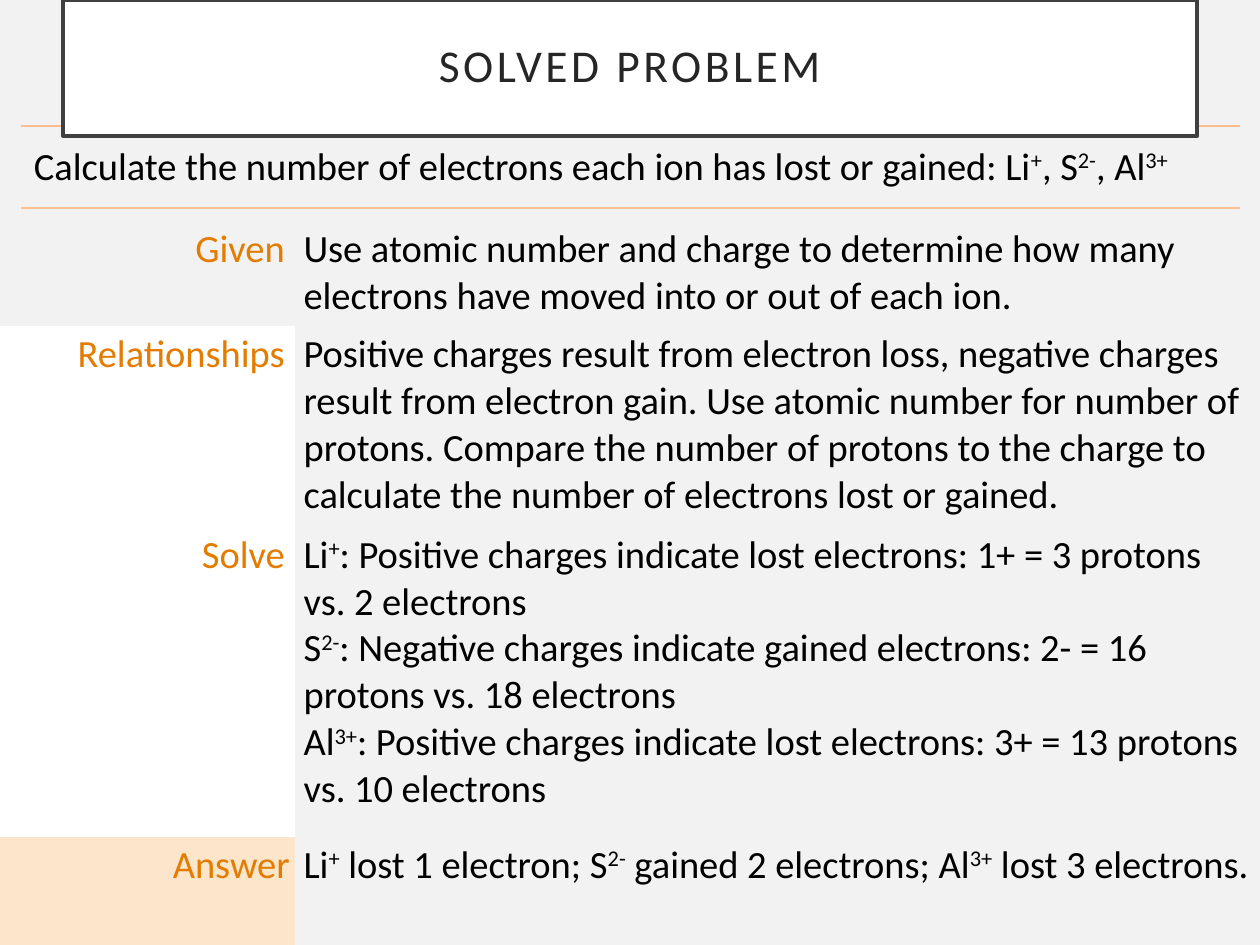
from dataclasses import dataclass

from lxml.etree import SubElement
from pptx import Presentation
from pptx.dml.color import RGBColor as RGB
from pptx.enum.text import MSO_ANCHOR as Anchor, PP_ALIGN as Align
from pptx.oxml.ns import qn
from pptx.util import Cm, Pt


@dataclass(frozen=True)
class Theme:
    font: str = "Calibri"
    title_size: int = 26
    body_size: int = 22
    background: RGB = RGB(0xF2, 0xF2, 0xF2)
    white: RGB = RGB(0xFF, 0xFF, 0xFF)
    frame: RGB = RGB(0x40, 0x40, 0x40)
    title: RGB = RGB(0x26, 0x26, 0x26)
    body: RGB = RGB(0, 0, 0)
    label: RGB = RGB(0xE3, 0x7C, 0x00)
    answer: RGB = RGB(0xFB, 0xE6, 0xCC)
    rule: str = "FEBE8F"


THEME = Theme()
PLAIN_TABLE = "{2D5ABB26-0587-4C30-8999-92F81FD0307C}"


def add_plain_table(slide, left, top, widths, heights):
    """Add a table without bands, grid or fills, sized in centimetres."""
    frame = slide.shapes.add_table(len(heights), len(widths), Cm(left), Cm(top),
                                   Cm(sum(widths)), Cm(sum(heights)))
    table = frame.table
    table.first_row = table.horz_banding = False
    table._tbl.tblPr.find(qn("a:tableStyleId")).text = PLAIN_TABLE
    for column, width in zip(table.columns, widths):
        column.width = Cm(width)
    for row, height in zip(table.rows, heights):
        row.height = Cm(height)
    return table


def write(paragraph, text, color, size=THEME.body_size):
    """Add runs to a paragraph; text between carets is superscript."""
    for index, part in enumerate(text.split("^")):
        for line_number, line in enumerate(part.split("\n")):
            if line_number:
                paragraph.add_line_break()
            if not line:
                continue
            run = paragraph.add_run()
            run.text = line
            run.font.name = THEME.font
            run.font.size = Pt(size)
            run.font.color.rgb = color
            if index % 2:
                run.font._element.set("baseline", "30000")


presentation = Presentation()
presentation.slide_width, presentation.slide_height = Cm(25.4), Cm(19.05)
slide = presentation.slides.add_slide(presentation.slide_layouts[5])
slide.background.fill.solid()
slide.background.fill.fore_color.rgb = THEME.background

# Question between two rules
question = add_plain_table(slide, 0.43, 2.54, [24.56], [1.65]).cell(0, 0)
question.vertical_anchor = Anchor.MIDDLE
question.fill.background()
write(question.text_frame.paragraphs[0],
      "Calculate the number of electrons each ion has lost or gained: "
      "Li^+^, S^2-^, Al^3+^", THEME.body)
cell_properties = question._tc.get_or_add_tcPr()
for position, side in enumerate(("a:lnT", "a:lnB")):
    border = SubElement(cell_properties, qn(side), w=str(Pt(1.5)))
    fill = SubElement(border, qn("a:solidFill"))
    SubElement(fill, qn("a:srgbClr"), val=THEME.rule)
    cell_properties.insert(position, border)

# Solution steps: label, explanation, label fill, row height
steps = [
    ("Given",
     "Use atomic number and charge to determine how many electrons have "
     "moved into or out of each ion.", None, 2.13),
    ("Relationships",
     "Positive charges result from electron loss, negative charges result "
     "from electron gain. Use atomic number for number of protons. Compare "
     "the number of protons to the charge to calculate the number of "
     "electrons lost or gained.", THEME.white, 4.04),
    ("Solve",
     "Li^+^: Positive charges indicate lost electrons: 1+ = 3 protons vs. 2 electrons\n"
     "S^2-^: Negative charges indicate gained electrons: 2- = 16 protons vs. 18 electrons\n"
     "Al^3+^: Positive charges indicate lost electrons: 3+ = 13 protons vs. 10 electrons",
     THEME.white, 6.25),
    ("Answer",
     "Li^+^ lost 1 electron; S^2-^ gained 2 electrons; Al^3+^ lost 3 electrons.",
     THEME.answer, 2.19),
]
solution = add_plain_table(slide, 0, 4.45, [5.94, 19.46], [step[3] for step in steps])
for row, (label, explanation, label_fill, height) in enumerate(steps):
    label_cell, text_cell = solution.cell(row, 0), solution.cell(row, 1)
    for cell in (label_cell, text_cell):
        cell.margin_left = cell.margin_right = Cm(0.2)
        cell.margin_top = cell.margin_bottom = Cm(0.1)
        cell.fill.background()
    text_cell.margin_left = Cm(0.18)
    if label == "Answer":
        label_cell.margin_right = Cm(0.1)
    if label_fill is not None:
        label_cell.fill.solid()
        label_cell.fill.fore_color.rgb = label_fill
    label_paragraph = label_cell.text_frame.paragraphs[0]
    label_paragraph.alignment = Align.RIGHT
    write(label_paragraph, label, THEME.label)
    write(text_cell.text_frame.paragraphs[0], explanation, THEME.body)

# Framed title, in front of the upper rule
title = slide.shapes.title
title.left, title.top, title.width, title.height = Cm(1.27), Cm(0), Cm(22.86), Cm(2.74)
title.fill.solid()
title.fill.fore_color.rgb = THEME.white
title.line.color.rgb = THEME.frame
title.line.width = Pt(2.5)
text_frame = title.text_frame
text_frame.word_wrap = True
text_frame.vertical_anchor = Anchor.MIDDLE
text_frame.margin_left = text_frame.margin_right = Cm(0.5)
text_frame.margin_top = text_frame.margin_bottom = Cm(0.5)
heading = text_frame.paragraphs[0]
heading.alignment = Align.CENTER
heading.line_spacing = 0.9
write(heading, "SOLVED PROBLEM", THEME.title, THEME.title_size)
heading.runs[0].font._element.set("spc", "200")
slide.shapes._spTree.append(title._element)

presentation.save("out.pptx")
